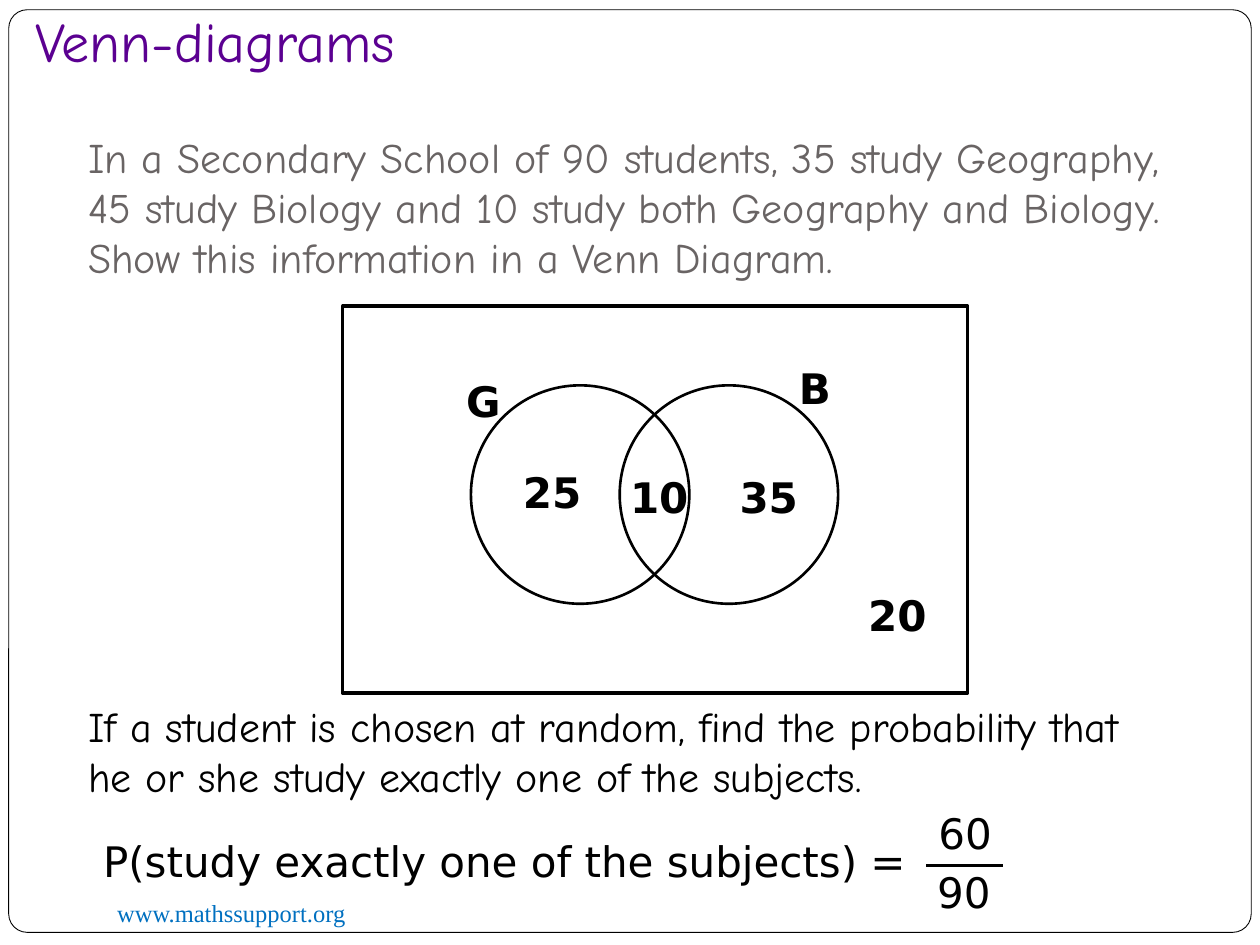
from dataclasses import dataclass

from lxml.etree import SubElement
from pptx import Presentation
from pptx.dml.color import RGBColor as Color
from pptx.enum.shapes import MSO_CONNECTOR as Connector, MSO_SHAPE as Shape
from pptx.enum.text import MSO_ANCHOR as Anchor
from pptx.oxml.ns import qn
from pptx.util import Pt


@dataclass(frozen=True)
class Theme:
    ink: str = "000000"
    paper: str = "FFFFFF"
    heading: str = "5B0091"
    question: str = "696464"
    site: str = "0070C0"
    hand: str = "Comic Neue"
    sans: str = "DejaVu Sans"
    serif: str = "Times New Roman"
    heading_size: int = 32
    body_size: int = 24
    site_size: int = 14


THEME = Theme()

HEADING = "Venn-diagrams"
SITE = "www.mathssupport.org"
QUESTION = (
    "In a Secondary School of 90 students, 35 study Geography, "
    "45 study Biology and 10 study both Geography and Biology."
    "\vShow this information in a Venn Diagram."
)
TASK = (
    "If a student is chosen at random, find the probability that "
    "he or she study exactly one of the subjects."
)
ANSWER = "P(study exactly one of the subjects) ="
FRACTION = [("60", 529.2, 457.9), ("90", 528.5, 491.8)]
VENN_LABELS = [
    ("G", 266.4, 211),
    ("B", 456.5, 203.8),
    ("25", 298.8, 262.8),
    ("10", 360, 265.7),
    ("35", 422.6, 265.7),
    ("20", 496.1, 333.4),
]
UNIVERSE = (195.8, 175, 357.2, 221)
DIAMETER = 124.8
CIRCLE_TOP = 220.2
CIRCLE_LEFTS = (269.1, 354.1)


def add_outline(page, kind, frame, weight, fill=None):
    shape = page.shapes.add_shape(kind, *map(Pt, frame))
    shape.shadow.inherit = False
    if fill:
        shape.fill.solid()
        shape.fill.fore_color.rgb = Color.from_string(fill)
    else:
        shape.fill.background()
    shape.line.color.rgb = Color.from_string(THEME.ink)
    shape.line.width = Pt(weight)
    return shape


def add_text(page, text, frame, font=THEME.sans, size=THEME.body_size,
             color=THEME.ink, bold=False, side=7.2, bottom=3.6, anchor=Anchor.TOP):
    box = page.shapes.add_textbox(*map(Pt, frame))
    body = box.text_frame
    body.word_wrap = True
    body.vertical_anchor = anchor
    body.margin_left = body.margin_right = Pt(side)
    body.margin_top, body.margin_bottom = Pt(3.6), Pt(bottom)
    body.text = text
    for span in body.paragraphs[0].runs:
        span.font.name = font
        span.font.size = Pt(size)
        span.font.bold = bold
        span.font.color.rgb = Color.from_string(color)


def add_rule(page, left, right, top, weight):
    rule = page.shapes.add_connector(
        Connector.STRAIGHT, Pt(left), Pt(top), Pt(right), Pt(top))
    rule.line.color.rgb = Color.from_string(THEME.ink)
    rule.line.width = Pt(weight)
    SubElement(rule._element.spPr, qn("a:effectLst"))


def main():
    deck = Presentation()
    deck.slide_width, deck.slide_height = Pt(720), Pt(540)
    page = deck.slides.add_slide(deck.slide_layouts[6])

    border = add_outline(page, Shape.ROUNDED_RECTANGLE, (5, 5.6, 710, 527.2), 0.5, THEME.paper)
    border.adjustments[0] = 0.02
    add_text(page, SITE, (59.8, 509.8, 234, 24.3), THEME.serif, THEME.site_size, THEME.site)
    add_text(page, TASK, (43.2, 396.7, 630, 65.5), THEME.hand)
    add_text(page, QUESTION, (43.2, 51.1, 656.6, 117.4), THEME.hand,
             color=THEME.question, bottom=7.2, anchor=Anchor.BOTTOM)

    add_outline(page, Shape.RECTANGLE, UNIVERSE, 2)
    for left in CIRCLE_LEFTS:
        add_outline(page, Shape.OVAL, (left, CIRCLE_TOP, DIAMETER, DIAMETER), 1.5)
    for label, left, top in VENN_LABELS:
        add_text(page, label, (left, top, 39.6, 28.8), bold=True, side=0)

    add_text(page, ANSWER, (51.8, 473.8, 483.8, 36))
    for number, left, top in FRACTION:
        add_text(page, number, (left, top, 48.2, 36))
    add_rule(page, 529.2, 573.1, 494.6, 1.75)
    add_text(page, HEADING, (13, 0, 612, 48.2), THEME.hand, THEME.heading_size, THEME.heading)

    deck.save("out.pptx")


if __name__ == "__main__":
    main()
